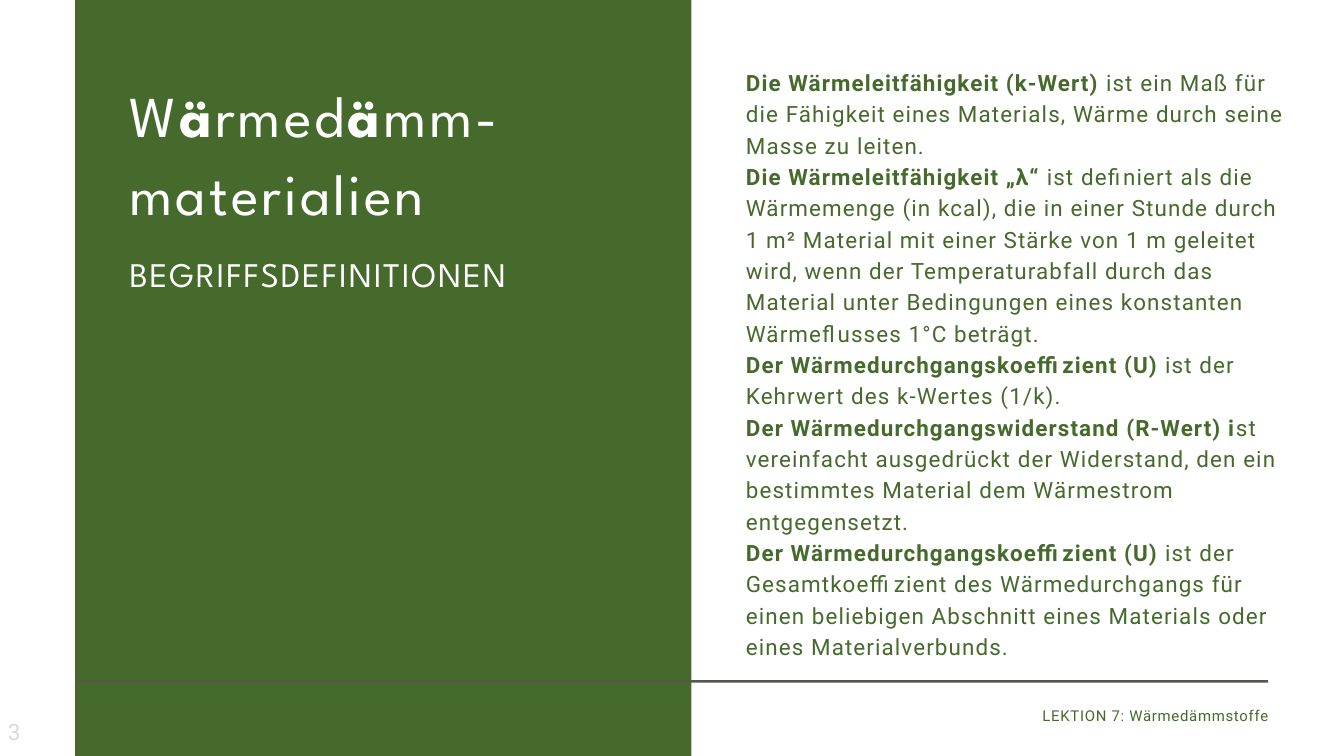
from dataclasses import dataclass
from typing import NamedTuple

from pptx import Presentation
from pptx.dml.color import RGBColor
from pptx.enum.shapes import MSO_SHAPE
from pptx.enum.text import MSO_ANCHOR, MSO_AUTO_SIZE, PP_ALIGN
from pptx.shapes.autoshape import Shape
from pptx.slide import Slide
from pptx.util import Emu, Pt

EMU_PER_PX = 9144


class Box(NamedTuple):
    left: int
    top: int
    width: int
    height: int


@dataclass(frozen=True)
class TextStyle:
    font: str
    size: int
    color: str
    tracking: float
    line_spacing: float | None = None
    alignment: PP_ALIGN = PP_ALIGN.LEFT


@dataclass(frozen=True)
class Theme:
    green: str = "456A2C"
    rule: str = "52584D"
    title: TextStyle = TextStyle("League Spartan", 62, "FFFFFF", 3.1, 83.7)
    subtitle: TextStyle = TextStyle("League Spartan", 37, "FFFFFF", 1.9, 48.1)
    body: TextStyle = TextStyle("Roboto", 24, "456A2C", 1.2, 33.6)
    footer: TextStyle = TextStyle("Roboto", 16, "456A2C", 0.8, 22.4, PP_ALIGN.RIGHT)
    page_number: TextStyle = TextStyle("Roboto", 24, "D9D9D9", 1.2)


class Segment(NamedTuple):
    text: str
    bold: bool = False


class Definition(NamedTuple):
    term: str
    explanation: str


THEME = Theme()

TITLE = [
    Segment("W"),
    Segment("ä", True),
    Segment("rmed"),
    Segment("ä", True),
    Segment("mm-materialien"),
]

DEFINITIONS = [
    Definition(
        "Die Wärmeleitfähigkeit (k-Wert) ",
        "ist ein Maß für die Fähigkeit eines Materials, Wärme durch seine Masse zu leiten.",
    ),
    Definition(
        "Die Wärmeleitfähigkeit „λ“ ",
        "ist definiert als die Wärmemenge (in kcal), die in einer Stunde durch 1 m² Material "
        "mit einer Stärke von 1 m geleitet wird, wenn der Temperaturabfall durch das Material "
        "unter Bedingungen eines konstanten Wärmeflusses 1°C beträgt.",
    ),
    Definition(
        "Der Wärmedurchgangskoeffizient (U) ",
        "ist der Kehrwert des k-Wertes (1/k).",
    ),
    Definition(
        "Der Wärmedurchgangswiderstand (R-Wert) i",
        "st vereinfacht ausgedrückt der Widerstand, den ein bestimmtes Material dem "
        "Wärmestrom entgegensetzt.",
    ),
    Definition(
        "Der Wärmedurchgangskoeffizient (U) ",
        "ist der Gesamtkoeffizient des Wärmedurchgangs für einen beliebigen Abschnitt "
        "eines Materials oder eines Materialverbunds.",
    ),
]


def px(length: int) -> Emu:
    return Emu(length * EMU_PER_PX)


def apply_format(target: object, values: dict[str, object]) -> None:
    for name, value in values.items():
        setattr(target, name, value)


def place(shape: Shape, box: Box) -> None:
    apply_format(shape, {name: px(length) for name, length in box._asdict().items()})


def add_rectangle(slide: Slide, box: Box, color: str) -> Shape:
    shape = slide.shapes.add_shape(MSO_SHAPE.RECTANGLE, *map(px, box))
    shape.shadow.inherit = False
    shape.fill.solid()
    shape.fill.fore_color.rgb = RGBColor.from_string(color)
    shape.line.fill.background()
    return shape


def write_text(
    shape: Shape,
    paragraphs: list[list[Segment]],
    style: TextStyle,
    margins: tuple[int, int] = (0, 0),
    anchor: MSO_ANCHOR = MSO_ANCHOR.TOP,
) -> None:
    frame = shape.text_frame
    horizontal, vertical = map(px, margins)
    apply_format(frame, {
        "word_wrap": True,
        "auto_size": MSO_AUTO_SIZE.NONE,
        "vertical_anchor": anchor,
        "margin_left": horizontal,
        "margin_right": horizontal,
        "margin_top": vertical,
        "margin_bottom": vertical,
    })
    for index, segments in enumerate(paragraphs):
        paragraph = frame.add_paragraph() if index else frame.paragraphs[0]
        paragraph.alignment = style.alignment
        if style.line_spacing:
            paragraph.line_spacing = Pt(style.line_spacing)
        for segment in segments:
            run = paragraph.add_run()
            run.text = segment.text
            apply_format(run.font, {
                "name": style.font,
                "size": Pt(style.size),
                "bold": segment.bold,
            })
            run.font.color.rgb = RGBColor.from_string(style.color)
            run._r.get_or_add_rPr().set("spc", str(round(style.tracking * 100)))


def add_text(
    slide: Slide,
    box: Box,
    paragraphs: list[list[Segment]],
    style: TextStyle,
    margins: tuple[int, int] = (0, 0),
    anchor: MSO_ANCHOR = MSO_ANCHOR.TOP,
) -> None:
    shape = slide.shapes.add_textbox(*map(px, box))
    write_text(shape, paragraphs, style, margins, anchor)


def main() -> None:
    presentation = Presentation()
    apply_format(presentation, {"slide_width": px(2000), "slide_height": px(1125)})
    slide = presentation.slides.add_slide(presentation.slide_layouts[5])

    title = slide.shapes.title
    place(title, Box(193, 105, 756, 232))
    write_text(title, [TITLE], THEME.title)

    panel = add_rectangle(slide, Box(112, -37, 917, 1198), THEME.green)
    title._element.addprevious(panel._element)

    definitions = [
        [Segment(definition.term, True), Segment(definition.explanation)]
        for definition in DEFINITIONS
    ]
    add_text(slide, Box(1110, 96, 807, 902), definitions, THEME.body)
    add_text(slide, Box(193, 372, 756, 67), [[Segment("BEGRIFFSDEFINITIONEN")]], THEME.subtitle)
    add_rectangle(slide, Box(112, 1012, 1775, 4), THEME.rule)
    add_text(
        slide, Box(1056, 1047, 832, 29), [[Segment("LEKTION 7: Wärmedämmstoffe")]], THEME.footer
    )
    add_text(
        slide, Box(2, 1069, 233, 40), [[Segment("3")]], THEME.page_number,
        (10, 5), MSO_ANCHOR.MIDDLE,
    )

    presentation.save("out.pptx")


if __name__ == "__main__":
    main()
